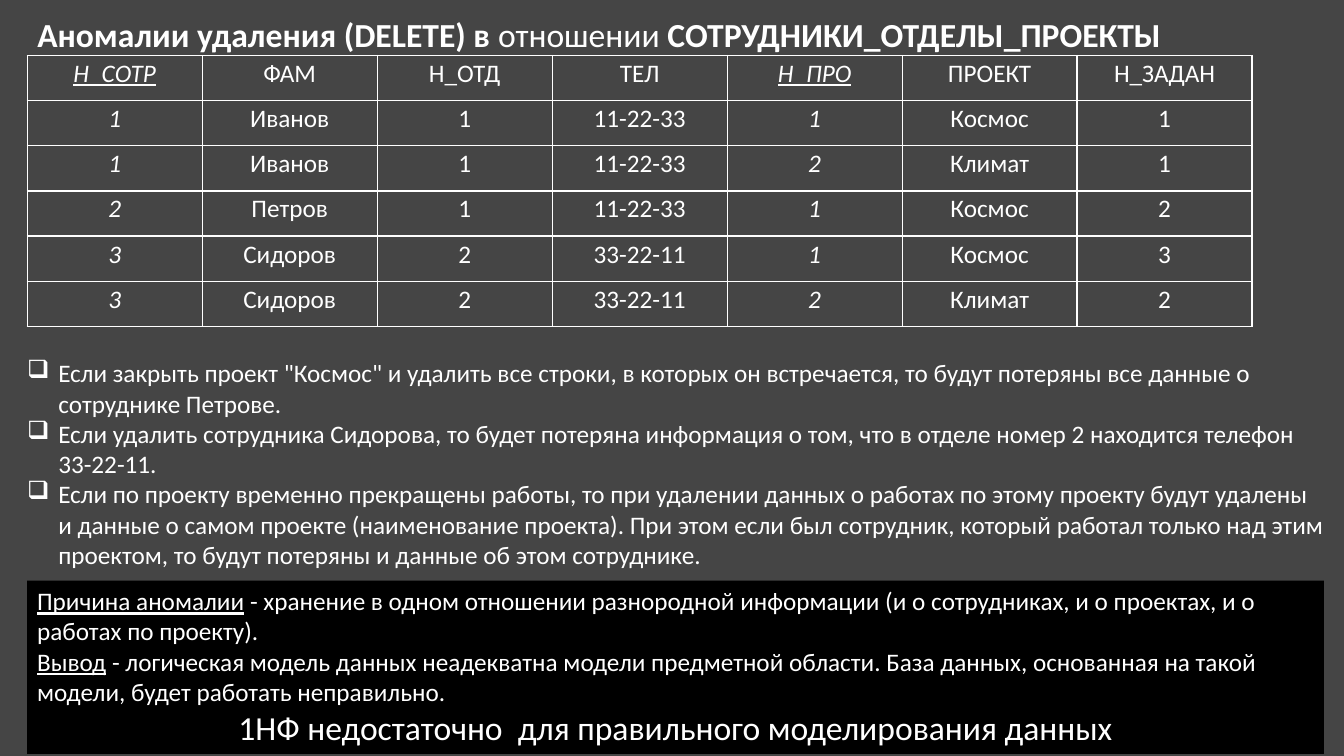
import pptx
import pptx.util
import pptx.dml.color
import pptx.enum.shapes
import pptx.enum.text
import pptx.oxml
import pptx.oxml.ns

Inches = pptx.util.Inches
Pt = pptx.util.Pt
ALIGN = pptx.enum.text.PP_ALIGN
ANCHOR = pptx.enum.text.MSO_ANCHOR

WHITE = "FFFFFF"
HEADER = ["Н_СОТР", "ФАМ", "Н_ОТД", "ТЕЛ", "Н_ПРО", "ПРОЕКТ", "Н_ЗАДАН"]
KEYS = {"Н_СОТР", "Н_ПРО"}
ROWS = [
    ["1", "Иванов", "1", "11-22-33", "1", "Космос", "1"],
    ["1", "Иванов", "1", "11-22-33", "2", "Климат", "1"],
    ["2", "Петров", "1", "11-22-33", "1", "Космос", "2"],
    ["3", "Сидоров", "2", "33-22-11", "1", "Космос", "3"],
    ["3", "Сидоров", "2", "33-22-11", "2", "Климат", "2"],
]
ANOMALIES = [
    'Если закрыть проект "Космос" и удалить все строки, в которых он встречается, '
    "то будут потеряны все данные о сотруднике Петрове.",
    "Если удалить сотрудника Сидорова, то будет потеряна информация о том, "
    "что в отделе номер 2 находится телефон 33-22-11.",
    "Если по проекту временно прекращены работы, то при удалении данных о работах "
    "по этому проекту будут удалены и данные о самом проекте (наименование проекта). "
    "При этом если был сотрудник, который работал только над этим проектом, "
    "то будут потеряны и данные об этом сотруднике.",
]
FINDINGS = [
    ("Причина аномалии", " - хранение в одном отношении разнородной информации "
     "(и о сотрудниках, и о проектах, и о работах по проекту)."),
    ("Вывод", " - логическая модель данных неадекватна модели предметной области. "
     "База данных, основанная на такой модели, будет работать неправильно."),
]


def rgb(value):
    return pptx.dml.color.RGBColor.from_string(value)


def add_text(p, text, size=18, bold=False, italic=False, underline=False):
    r = p.add_run()
    r.text = text
    f = r.font
    f.name = "Calibri"
    f.size = Pt(size)
    f.bold = bold
    f.italic = italic
    f.underline = underline
    f.color.rgb = rgb(WHITE)


def next_paragraph(tf, first, align=ALIGN.LEFT):
    p = tf.paragraphs[0] if first else tf.add_paragraph()
    p.alignment = align
    return p


def xml(tag, body="", attrs=""):
    ns = pptx.oxml.ns.nsdecls("a")
    return pptx.oxml.parse_xml(f"<a:{tag} {ns} {attrs}>{body}</a:{tag}>")


def add_title(s, x, y, w, h):
    sp = s.shapes.title
    sp.left, sp.top, sp.width, sp.height = map(Inches, (x, y, w, h))
    tf = sp.text_frame
    tf.word_wrap = True
    tf.auto_size = pptx.enum.text.MSO_AUTO_SIZE.NONE
    tf.vertical_anchor = ANCHOR.TOP
    p = next_paragraph(tf, True)
    p.line_spacing = 0.9
    add_text(p, "Аномалии удаления (DELETE) в", size=24, bold=True)
    add_text(p, " отношении ", size=24)
    add_text(p, "СОТРУДНИКИ_ОТДЕЛЫ_ПРОЕКТЫ", size=24, bold=True)


def format_cell(cell):
    cell.margin_left = cell.margin_right = Inches(0.03)
    cell.margin_top = cell.margin_bottom = Inches(0.03)
    tcPr = cell._tc.get_or_add_tcPr()
    for side in ("lnL", "lnR", "lnT", "lnB"):
        fill = f'<a:solidFill><a:srgbClr val="{WHITE}"/></a:solidFill>'
        tcPr.append(xml(side, fill, f'w="{Pt(1)}"'))
    cell.fill.background()


def add_relation(s, x, y, w, h):
    data = [HEADER] + ROWS
    frame = s.shapes.add_table(len(data), len(HEADER), *map(Inches, (x, y, w, h)))
    table = frame.table
    table.first_row = table.horz_banding = False
    for column in table.columns:
        column.width = Inches(w / len(HEADER))
    for i, values in enumerate(data):
        table.rows[i].height = Inches(h / len(data))
        for j, value in enumerate(values):
            cell = table.cell(i, j)
            format_cell(cell)
            key = HEADER[j] in KEYS
            p = next_paragraph(cell.text_frame, True, ALIGN.CENTER)
            add_text(p, value, italic=key, underline=key and i == 0)


def add_anomalies(s, x, y, w, h):
    sp = s.shapes.add_textbox(*map(Inches, (x, y, w, h)))
    tf = sp.text_frame
    tf.word_wrap = True
    for i, text in enumerate(ANOMALIES):
        p = next_paragraph(tf, i == 0)
        pPr = p._p.get_or_add_pPr()
        pPr.set("marL", str(Inches(0.31)))
        pPr.set("indent", str(-Inches(0.31)))
        pPr.append(xml("buChar", attrs='char="❑"'))
        add_text(p, text)


def add_conclusion(s, x, y, w, h):
    rect = pptx.enum.shapes.MSO_SHAPE.RECTANGLE
    sp = s.shapes.add_shape(rect, *map(Inches, (x, y, w, h)))
    sp.shadow.inherit = False
    sp.fill.solid()
    sp.fill.fore_color.rgb = rgb("000000")
    sp.line.fill.background()
    tf = sp.text_frame
    tf.word_wrap = True
    tf.vertical_anchor = ANCHOR.TOP
    for i, (term, text) in enumerate(FINDINGS):
        p = next_paragraph(tf, i == 0)
        add_text(p, term, underline=True)
        add_text(p, text)
    p = next_paragraph(tf, False, ALIGN.CENTER)
    add_text(p, "1НФ недостаточно  для правильного моделирования данных", size=24)


def main():
    prs = pptx.Presentation()
    prs.slide_width = Inches(13.33)
    prs.slide_height = Inches(7.5)
    s = prs.slides.add_slide(prs.slide_layouts[5])
    s.background.fill.solid()
    s.background.fill.fore_color.rgb = rgb("454545")
    add_title(s, 0.27, 0.13, 12.15, 0.85)
    add_relation(s, 0.27, 0.55, 12.15, 2.69)
    add_anomalies(s, 0.17, 3.5, 13.06, 2.22)
    add_conclusion(s, 0.27, 5.76, 12.86, 1.72)
    prs.save("out.pptx")


if __name__ == "__main__":
    main()
